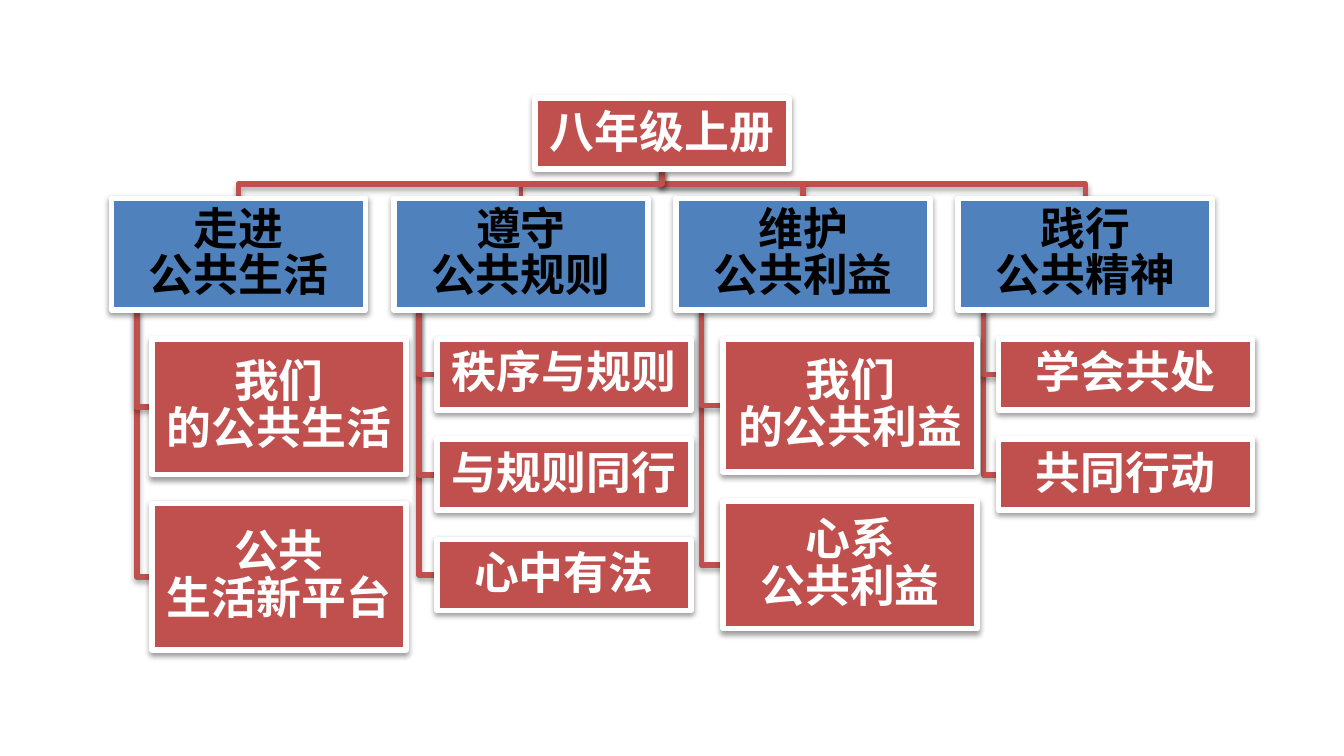
"""Build a tree slide of the Grade 8 volume one units and their lessons."""
from lxml.etree import SubElement
from pptx import Presentation
from pptx.dml.color import RGBColor
from pptx.enum.shapes import MSO_SHAPE
from pptx.enum.text import MSO_ANCHOR, PP_ALIGN
from pptx.oxml.ns import qn
from pptx.util import Inches, Pt

COLORS = {"red": "C0504D", "blue": "4F81BD", "white": "FFFFFF", "black": "000000"}
FONT = "Arial"

ROOT = "八年级上册"
UNITS = [
    {"title": "走进\n公共生活", "indent": 0.3, "branch": 3,
     "lessons": [("我们\n的公共生活", 1.01), ("公共\n生活新平台", 1.09)]},
    {"title": "遵守\n公共规则", "indent": 0.32, "branch": 2,
     "lessons": [("秩序与规则", 0.53), ("与规则同行", 0.53), ("心中有法", 0.53)]},
    {"title": "维护\n公共利益", "indent": 0.35, "branch": 3,
     "lessons": [("我们\n的公共利益", 0.99), ("心系\n公共利益", 0.95)]},
    {"title": "践行\n公共精神", "indent": 0.3, "branch": 3,
     "lessons": [("学会共处", 0.53), ("共同行动", 0.53)]},
]

SLIDE_WIDTH = Inches(10)
SLIDE_HEIGHT = SLIDE_WIDTH * 9 // 16
BOX_WIDTH = 1.89
ROOT_TOP, ROOT_HEIGHT = 0.73, 0.53
UNIT_LEFT, UNIT_STEP, UNIT_HEIGHT = 0.83, 2.1, 0.83
GAP = UNIT_HEIGHT * 0.26
SPINE_INDENT = BOX_WIDTH / 10


def add_shadow(shape, opacity, distance):
    shape.shadow.inherit = False
    effects = shape._element.spPr.find(qn("a:effectLst"))
    shadow = SubElement(effects, qn("a:outerShdw"), blurRad=str(Pt(3.1)),
                        dist=str(Pt(distance)), dir="5400000", rotWithShape="0")
    color = SubElement(shadow, qn("a:srgbClr"), val=COLORS["black"])
    SubElement(color, qn("a:alpha"), val=str(opacity * 1000))


def set_line(shape, color, width):
    shape.line.color.rgb = RGBColor.from_string(COLORS[color])
    shape.line.width = Pt(width)


def add_branch(slide, points, width):
    corners = [(Inches(x), Inches(y)) for x, y in points]
    builder = slide.shapes.build_freeform(*corners[0])
    builder.add_line_segments(corners[1:], close=False)
    branch = builder.convert_to_shape()
    branch.fill.background()
    set_line(branch, "red", width)
    add_shadow(branch, 35, 1.8)


def add_box(slide, text, left, top, height, fill="red", text_color="white"):
    box = slide.shapes.add_shape(MSO_SHAPE.RECTANGLE, Inches(left), Inches(top),
                                 Inches(BOX_WIDTH), Inches(height))
    box.fill.solid()
    box.fill.fore_color.rgb = RGBColor.from_string(COLORS[fill])
    set_line(box, "white", 3)
    add_shadow(box, 38, 1.6)
    frame = box.text_frame
    frame.word_wrap = True
    frame.vertical_anchor = MSO_ANCHOR.MIDDLE
    frame.margin_left = frame.margin_right = Inches(0.02)
    frame.margin_top = frame.margin_bottom = Inches(0.02)
    frame.text = text
    for paragraph in frame.paragraphs:
        paragraph.alignment = PP_ALIGN.CENTER
        paragraph.line_spacing = Pt(25)
        for run in paragraph.runs:
            run.font.name = FONT
            run.font.size = Pt(24)
            run.font.bold = True
            run.font.color.rgb = RGBColor.from_string(COLORS[text_color])


def main():
    presentation = Presentation()
    presentation.slide_width = SLIDE_WIDTH
    presentation.slide_height = SLIDE_HEIGHT
    slide = presentation.slides.add_slide(presentation.slide_layouts[6])

    root_left = UNIT_LEFT + UNIT_STEP * (len(UNITS) - 1) / 2
    root_center = root_left + BOX_WIDTH / 2
    root_bottom = ROOT_TOP + ROOT_HEIGHT
    unit_top = root_bottom + GAP
    unit_bottom = unit_top + UNIT_HEIGHT
    middle = root_bottom + GAP / 2

    boxes = [(ROOT, root_left, ROOT_TOP, ROOT_HEIGHT)]
    branches = []
    for column, unit in enumerate(UNITS):
        left = UNIT_LEFT + column * UNIT_STEP
        center, spine = left + BOX_WIDTH / 2, left + SPINE_INDENT
        lesson_left = left + unit["indent"]
        boxes.append((unit["title"], left, unit_top, UNIT_HEIGHT, "blue", "black"))
        branches.append(([(root_center, root_bottom), (root_center, middle),
                          (center, middle), (center, unit_top)], unit["branch"]))
        top = unit_bottom + GAP
        for text, height in unit["lessons"]:
            lesson_middle = top + height / 2
            boxes.append((text, lesson_left, top, height))
            branches.append(([(spine, unit_bottom), (spine, lesson_middle),
                              (lesson_left, lesson_middle)], 3))
            top += height + GAP

    for points, width in reversed(branches):
        add_branch(slide, points, width)
    for box in boxes:
        add_box(slide, *box)
    presentation.save("out.pptx")


if __name__ == "__main__":
    main()
